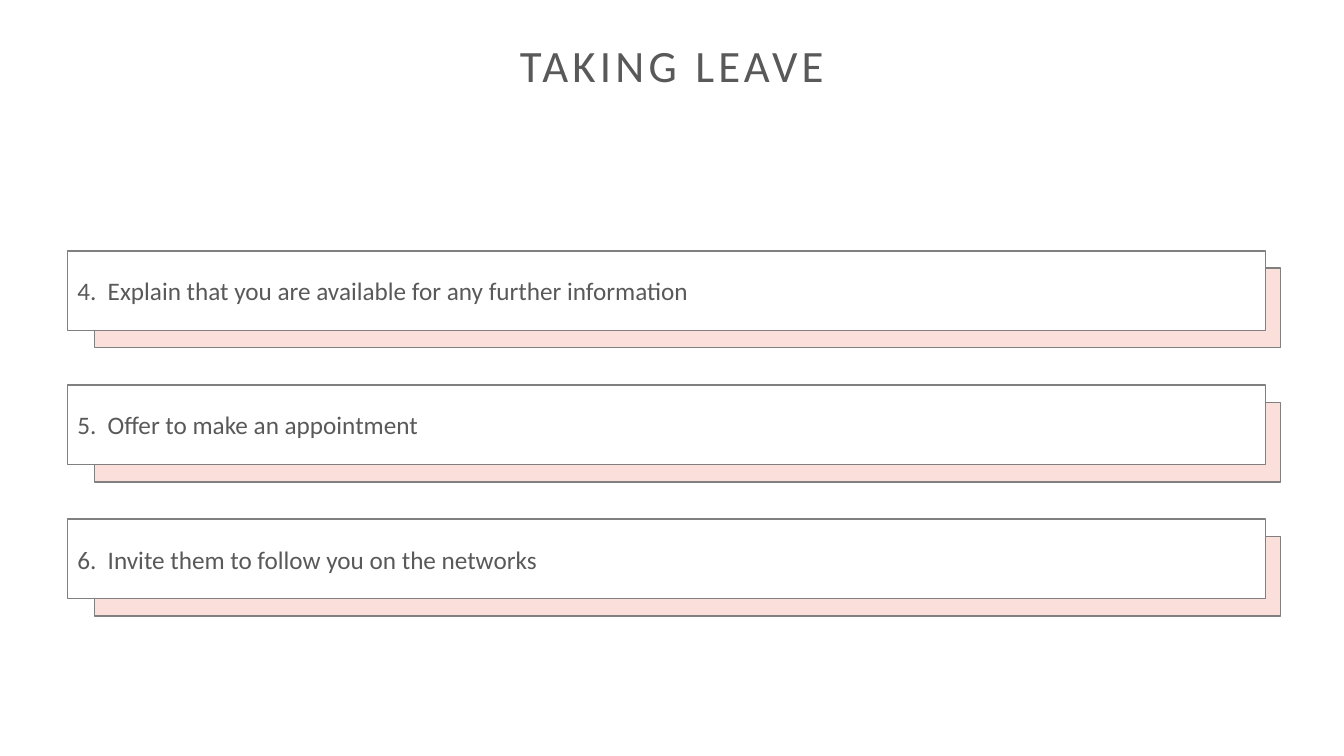
import dataclasses

import pptx
import pptx.dml.color
import pptx.enum.shapes
import pptx.enum.text
import pptx.slide
import pptx.text.text
import pptx.util

SCALE = 9144  # EMU per px, 100 px to the inch
FONT = "Calibri"
GRAY = pptx.dml.color.RGBColor(0x59, 0x59, 0x59)
EDGE = pptx.dml.color.RGBColor(0x80, 0x80, 0x80)
PINK = pptx.dml.color.RGBColor(0xFB, 0xDF, 0xDA)
WHITE = pptx.dml.color.RGBColor(0xFF, 0xFF, 0xFF)

TOP = 249
PITCH = 133
HEIGHT = 79
DROP = 17
INDENT = 30


@dataclasses.dataclass
class Step:
    number: int
    text: str


STEPS = [
    Step(4, "Explain that you are available for any further information"),
    Step(5, "Offer to make an appointment"),
    Step(6, "Invite them to follow you on the networks"),
]


def px(count: int) -> pptx.util.Emu:
    return pptx.util.Emu(count * SCALE)


def add_run(para: pptx.text.text._Paragraph, text: str, size: int):
    run = para.add_run()
    run.text = text
    run.font.name = FONT
    run.font.size = pptx.util.Pt(size)
    run.font.color.rgb = GRAY
    return run


def add_title(slide: pptx.slide.Slide, text: str) -> None:
    title = slide.shapes.title
    title.left, title.top = px(0), px(32)
    title.width, title.height = px(1333), px(118)
    frame = title.text_frame
    frame.word_wrap = True
    frame.vertical_anchor = pptx.enum.text.MSO_ANCHOR.TOP
    para = frame.paragraphs[0]
    para.alignment = pptx.enum.text.PP_ALIGN.CENTER
    run = add_run(para, text, 32)
    run.font._element.set("spc", "300")  # letter spacing of 3 pt


def add_box(group, left: int, top: int, width: int,
            fill: pptx.dml.color.RGBColor):
    kind = pptx.enum.shapes.MSO_SHAPE.FLOWCHART_PROCESS
    box = group.shapes.add_shape(kind, px(left), px(top), px(width), px(HEIGHT))
    box.shadow.inherit = False
    box.fill.solid()
    box.fill.fore_color.rgb = fill
    box.line.color.rgb = EDGE
    box.line.width = pptx.util.Pt(1)
    return box


def add_step(slide: pptx.slide.Slide, step: Step, top: int) -> None:
    group = slide.shapes.add_group_shape()
    add_box(group, 94, top + DROP, 1176, PINK)
    card = add_box(group, 67, top, 1188, WHITE)
    frame = card.text_frame
    frame.word_wrap = True
    frame.vertical_anchor = pptx.enum.text.MSO_ANCHOR.MIDDLE
    para = frame.paragraphs[0]
    para.alignment = pptx.enum.text.PP_ALIGN.LEFT
    # Hanging indent: the tab after the number lands on the margin
    props = para._p.get_or_add_pPr()
    props.set("marL", str(px(INDENT)))
    props.set("indent", str(-px(INDENT)))
    add_run(para, f"{step.number}.\t", 18)
    add_run(para, step.text, 18)


def main() -> None:
    deck = pptx.Presentation()
    deck.slide_width, deck.slide_height = px(1333), px(750)
    slide = deck.slides.add_slide(deck.slide_layouts[5])
    add_title(slide, "TAKING LEAVE")
    # Stacked steps
    for row, step in enumerate(STEPS):
        add_step(slide, step, TOP + row * PITCH)
    deck.save("out.pptx")


if __name__ == "__main__":
    main()
